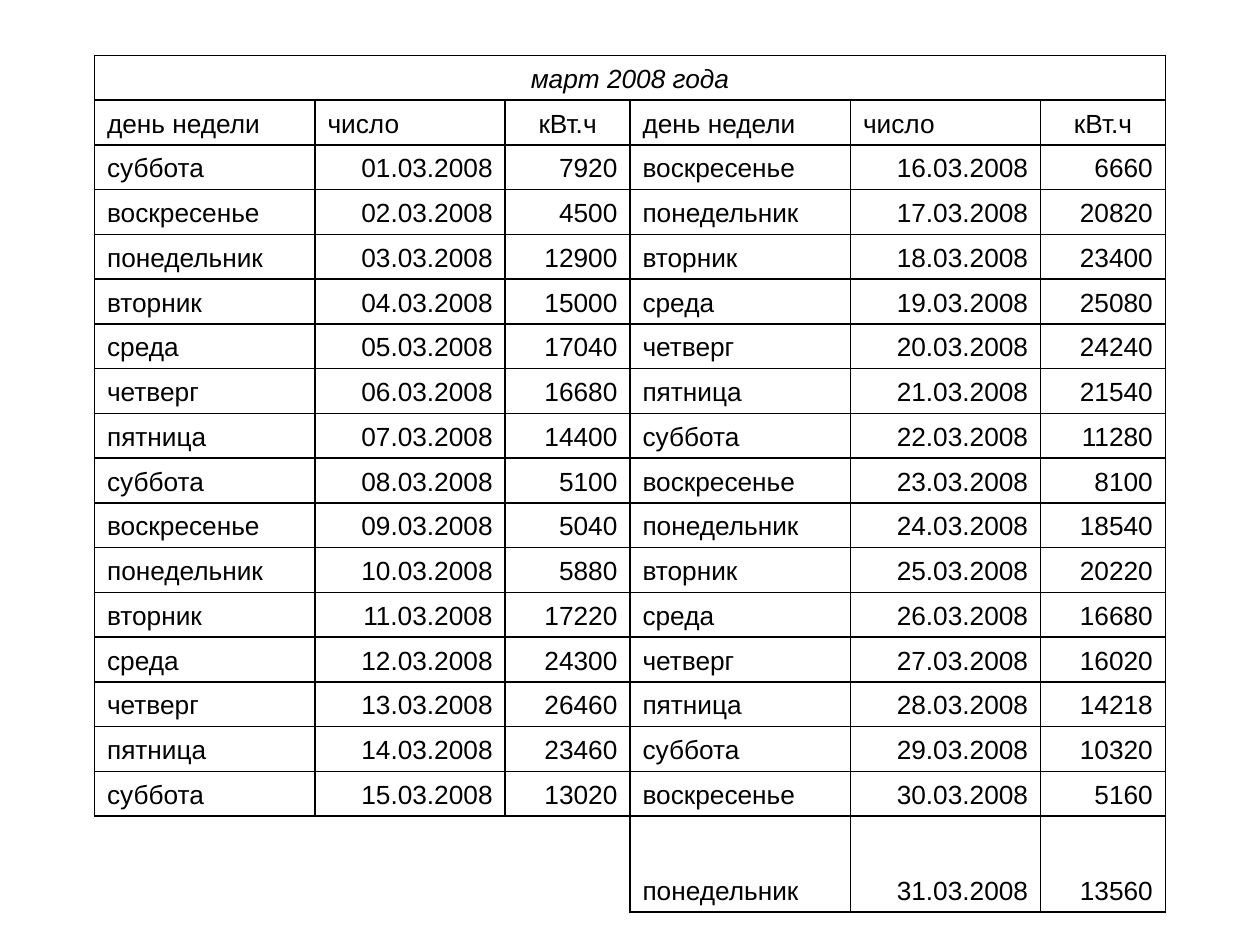
import dataclasses
import lxml.etree as etree
import pptx
import pptx.dml.color
import pptx.enum.text
import pptx.oxml.ns
import pptx.table
import pptx.util

Inches = pptx.util.Inches
Pt = pptx.util.Pt
Align = pptx.enum.text.PP_ALIGN
Anchor = pptx.enum.text.MSO_ANCHOR

HUES = {"ink": "000000"}
INK = pptx.dml.color.RGBColor.from_string(HUES["ink"])
FONT = {"name": "Arial", "size": Pt(15), "bold": False}
FLAGS = {"first_row": False, "horz_banding": False}
WIDTHS = [1.75, 1.51, 0.99] * 2
ROWS = 18
LAST = ROWS - 1
BODY = 6.04
TAIL = 0.76
HANG = 0.38
HALF = 15
HEADS = ["день недели", "число", "кВт.ч"]
DAYS = ["суббота", "воскресенье", "понедельник", "вторник", "среда",
        "четверг", "пятница"]
POWER = [7920, 4500, 12900, 15000, 17040, 16680, 14400, 5100, 5040, 5880,
         17220, 24300, 26460, 23460, 13020, 6660, 20820, 23400, 25080,
         24240, 21540, 11280, 8100, 18540, 20220, 16680, 16020, 14218,
         10320, 5160, 13560]


@dataclasses.dataclass
class Entry:
    row: int
    col: int
    text: str
    align: Align = Align.LEFT
    italic: bool = False


def edge(cell: pptx.table._Cell, sides: str) -> None:
    cell.fill.background()
    props = cell._tc.get_or_add_tcPr()
    for spot, side in enumerate("LRTB"):
        line = etree.Element(pptx.oxml.ns.qn(f"a:ln{side}"), w=str(Pt(1)))
        if side in sides:
            fill = etree.SubElement(line, pptx.oxml.ns.qn("a:solidFill"))
            etree.SubElement(fill, pptx.oxml.ns.qn("a:srgbClr"),
                             val=HUES["ink"])
        else:
            etree.SubElement(line, pptx.oxml.ns.qn("a:noFill"))
        props.insert(spot, line)


def sides(row: int, col: int) -> str:
    if row == LAST and col < 3:
        return "TR" if col == 2 else "T"
    if row == 0 and col > 0:
        return "TBR" if col == 5 else "TB"
    return "LRTB"


def write(grid: pptx.table.Table, entry: Entry) -> None:
    cell = grid.cell(entry.row, entry.col)
    cell.vertical_anchor = Anchor.BOTTOM
    para = cell.text_frame.paragraphs[0]
    para.alignment = entry.align
    props = para._p.get_or_add_pPr()
    props.set("marL", str(Inches(HANG)))
    props.set("indent", str(-Inches(HANG)))
    run = para.add_run()
    run.text = entry.text
    for key, value in (FONT | {"italic": entry.italic}).items():
        setattr(run.font, key, value)
    run.font.color.rgb = INK


def entries() -> list[Entry]:
    items = [Entry(0, 0, "март 2008 года", Align.CENTER, True)]
    for col in range(6):
        align = Align.CENTER if col % 3 == 2 else Align.LEFT
        items.append(Entry(1, col, HEADS[col % 3], align))
    for day, power in enumerate(POWER, 1):
        row, col = (day + 1, 0) if day <= HALF else (day + 1 - HALF, 3)
        items += [
            Entry(row, col, DAYS[(day - 1) % 7]),
            Entry(row, col + 1, f"{day:02}.03.2008", Align.RIGHT),
            Entry(row, col + 2, str(power), Align.RIGHT),
        ]
    return items


def main() -> None:
    deck = pptx.Presentation()
    deck.slide_width = Inches(10)
    deck.slide_height = Inches(7.5)
    slide = deck.slides.add_slide(deck.slide_layouts[6])
    grid = slide.shapes.add_table(
        ROWS, 6, Inches(0.75), Inches(0.44),
        Inches(sum(WIDTHS)), Inches(BODY + TAIL)).table
    for key, value in FLAGS.items():
        setattr(grid, key, value)
    for col, width in zip(grid.columns, WIDTHS):
        col.width = Inches(width)
    for spot, row in enumerate(grid.rows):
        row.height = Inches(TAIL if spot == LAST else BODY / LAST)
    grid.cell(0, 0).merge(grid.cell(0, 5))
    for row in range(ROWS):
        for col in range(6):
            edge(grid.cell(row, col), sides(row, col))
    for entry in entries():
        write(grid, entry)
    deck.save("out.pptx")


if __name__ == "__main__":
    main()
